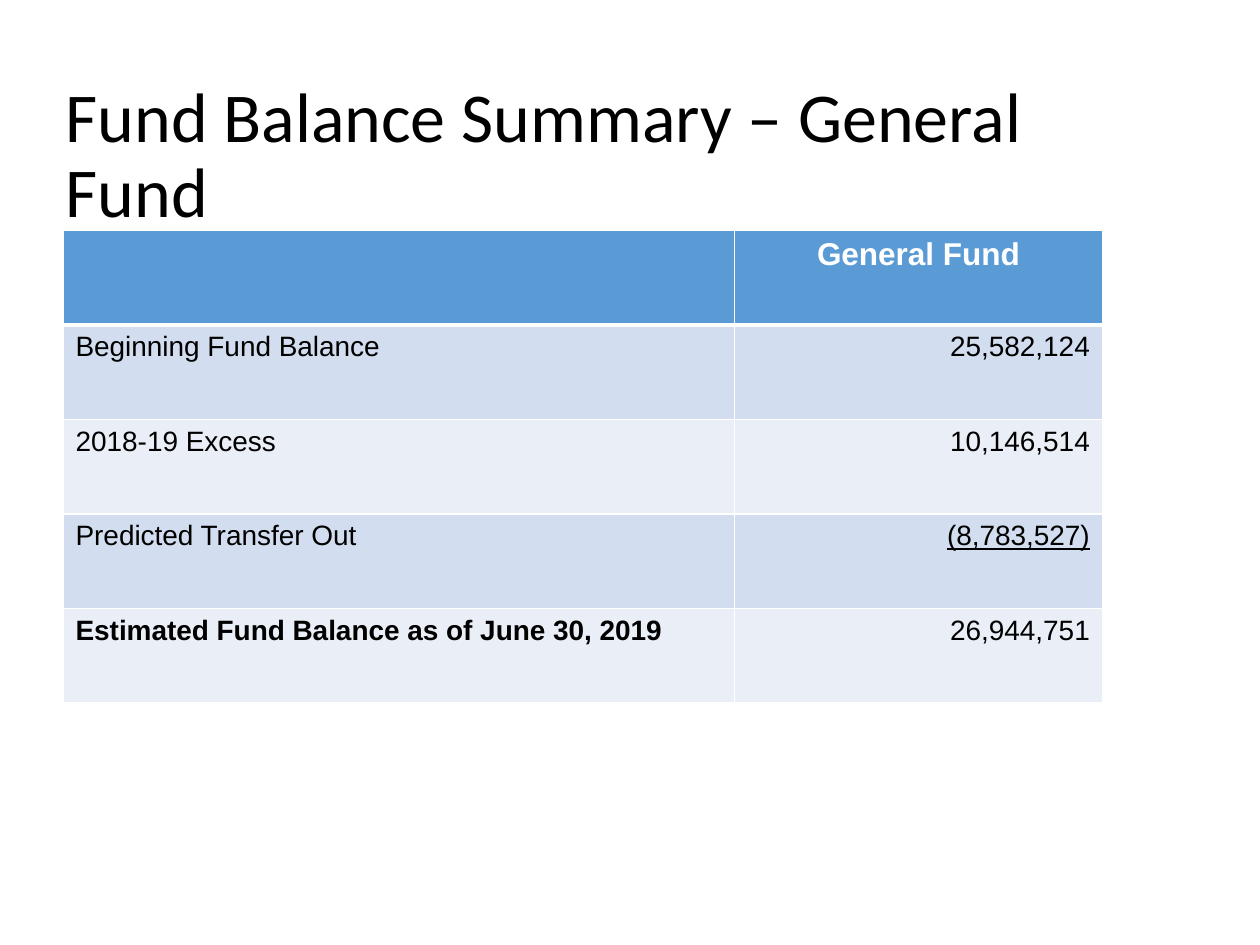
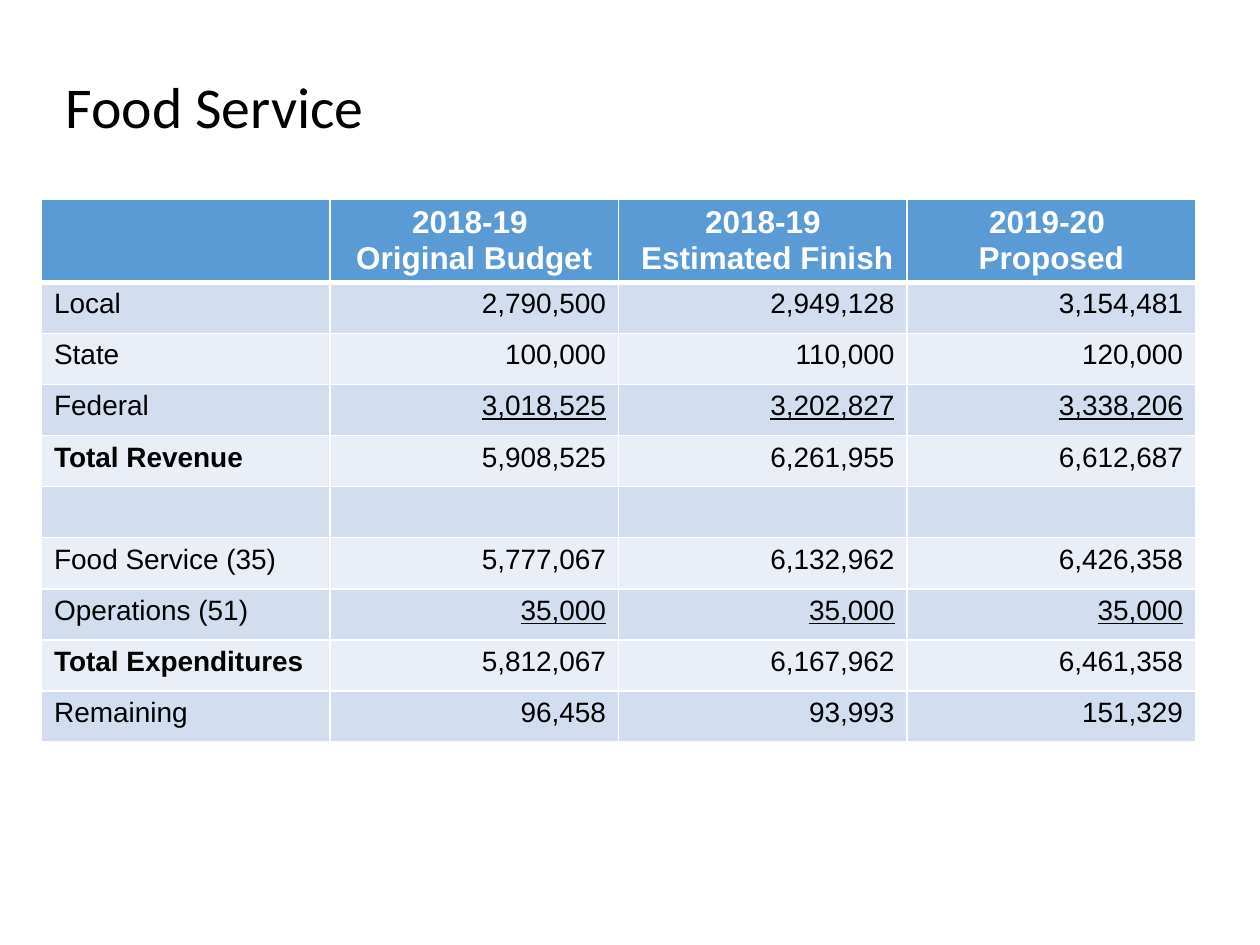
import pptx
import pptx.dml.color
import pptx.enum.text
import pptx.oxml
import pptx.oxml.ns
import pptx.util
from lxml import etree

Inches, Pt = pptx.util.Inches, pptx.util.Pt
RGBColor = pptx.dml.color.RGBColor
ALIGN = pptx.enum.text.PP_ALIGN

# Shared look
BLACK = RGBColor(0x00, 0x00, 0x00)
WHITE = RGBColor(0xFF, 0xFF, 0xFF)
HEADER_BLUE = RGBColor(0x5B, 0x9B, 0xD5)
BANDS = (RGBColor(0xD2, 0xDE, 0xEF), RGBColor(0xEA, 0xEF, 0xF7))
TITLE_FONT, TABLE_FONT = "Calibri", "Arial"
TITLE_ONLY = 5
TITLE_LEFT = 0.42
THIN, THICK = 1, 3

# Table content: first row is the header, first column the labels
GENERAL_FUND = [
    ["", "General Fund"],
    ["Beginning Fund Balance", "25,582,124"],
    ["2018-19 Excess", "10,146,514"],
    ["Predicted Transfer Out", "(8,783,527)"],
    ["Estimated Fund Balance as of June 30, 2019", "26,944,751"],
]
FOOD_SERVICE = [
    ["", "2018-19 \nOriginal Budget", "2018-19\n Estimated Finish", "2019-20 \nProposed"],
    ["Local", "2,790,500", "2,949,128", "3,154,481"],
    ["State", "100,000", "110,000", "120,000"],
    ["Federal", "3,018,525", "3,202,827", "3,338,206"],
    ["Total Revenue", "5,908,525", "6,261,955", "6,612,687"],
    ["", "", "", ""],
    ["Food Service (35)", "5,777,067", "6,132,962", "6,426,358"],
    ["Operations (51)", "35,000", "35,000", "35,000"],
    ["Total Expenditures", "5,812,067", "6,167,962", "6,461,358"],
    ["Remaining", "96,458", "93,993", "151,329"],
]


def write(frame, text, size, font=TABLE_FONT, color=BLACK, align=ALIGN.LEFT,
          bold=False, underline=False, spacing=None):
    """Fill a text frame, one paragraph per line of text."""
    for index, line in enumerate(text.split("\n")):
        para = frame.paragraphs[0] if index == 0 else frame.add_paragraph()
        para.alignment = align
        para.line_spacing = spacing
        para.font.size = Pt(size)
        if not line:
            continue
        span = para.add_run()
        span.text = line
        span.font.name, span.font.size = font, Pt(size)
        span.font.color.rgb = color
        span.font.bold, span.font.underline = bold, underline


def add_titled_page(deck, text, top, width, height, size):
    page = deck.slides.add_slide(deck.slide_layouts[TITLE_ONLY])
    box = page.shapes.title
    box.left, box.top = Inches(TITLE_LEFT), Inches(top)
    box.width, box.height = Inches(width), Inches(height)
    frame = box.text_frame
    frame.word_wrap = True
    frame.auto_size = pptx.enum.text.MSO_AUTO_SIZE.NONE
    frame.vertical_anchor = pptx.enum.text.MSO_ANCHOR.MIDDLE
    write(frame, text, size, font=TITLE_FONT, spacing=0.9)
    return page


def set_borders(cell, top, bottom):
    properties = cell._tc.get_or_add_tcPr()
    for side, points in (("L", THIN), ("R", THIN), ("T", top), ("B", bottom)):
        line = etree.SubElement(properties, pptx.oxml.ns.qn(f"a:ln{side}"), w=str(Pt(points)))
        fill = etree.SubElement(line, pptx.oxml.ns.qn("a:solidFill"))
        etree.SubElement(fill, pptx.oxml.ns.qn("a:srgbClr"), val=str(WHITE))


def add_banded_table(page, rows, left, top, widths, row_height, bold_rows, underlined_rows):
    """Draw a table with a blue header row and two alternating row fills."""
    table = page.shapes.add_table(
        len(rows), len(widths), Inches(left), Inches(top),
        Inches(sum(widths)), row_height * len(rows)).table
    for column, width in zip(table.columns, widths):
        column.width = Inches(width)
    for r, values in enumerate(rows):
        table.rows[r].height = row_height
        for c, value in enumerate(values):
            cell = table.cell(r, c)
            set_borders(cell, top=THICK if r == 1 else THIN,
                        bottom=THICK if r == 0 else THIN)
            cell.fill.solid()
            cell.fill.fore_color.rgb = BANDS[(r - 1) % 2] if r else HEADER_BLUE
            if r == 0:
                write(cell.text_frame, value, 18, color=WHITE, align=ALIGN.CENTER, bold=True)
            elif c == 0:
                write(cell.text_frame, value, 16, bold=r in bold_rows)
            else:
                write(cell.text_frame, value, 16, align=ALIGN.RIGHT,
                      underline=r in underlined_rows)


def main():
    deck = pptx.Presentation()
    deck.slide_width, deck.slide_height = Inches(10), Inches(7.5)

    # General fund balance
    page = add_titled_page(deck, "Fund Balance Summary – General Fund",
                           top=0.75, width=8.95, height=1, size=40)
    add_banded_table(page, GENERAL_FUND, left=0.5, top=1.83, widths=[5.33, 2.92],
                     row_height=Inches(0.75), bold_rows={4}, underlined_rows={3})

    # Food service budget
    page = add_titled_page(deck, "Food Service", top=0.25, width=8.5, height=1.25, size=33)
    add_banded_table(page, FOOD_SERVICE, left=0.33, top=1.58, widths=[2.29] * 4,
                     row_height=Pt(29.2), bold_rows={4, 8}, underlined_rows={3, 7})

    deck.save("out.pptx")


if __name__ == "__main__":
    main()
